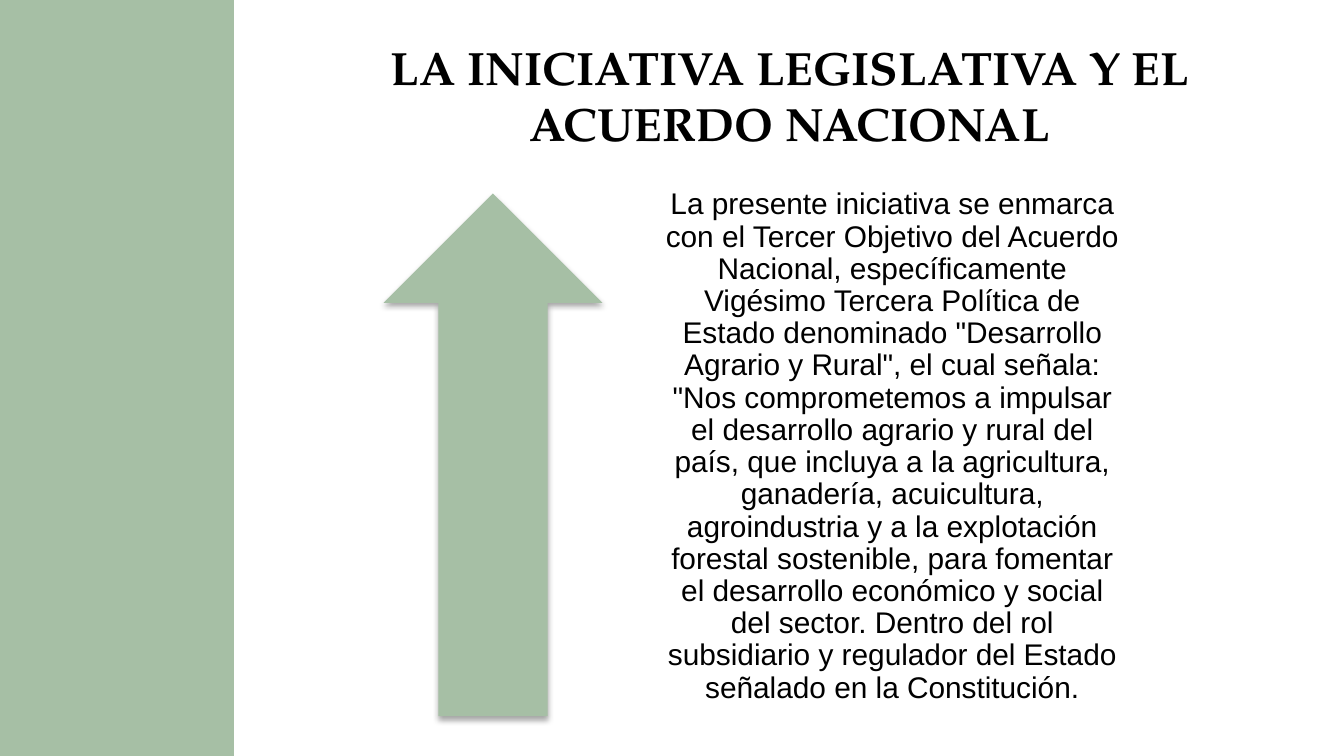
from dataclasses import dataclass

from lxml.etree import SubElement
from pptx import Presentation
from pptx.dml.color import RGBColor
from pptx.enum.shapes import MSO_SHAPE as Shape
from pptx.enum.text import MSO_ANCHOR as Anchor, PP_ALIGN as Align
from pptx.oxml.ns import qn
from pptx.util import Pt


@dataclass(frozen=True)
class Theme:
    green = RGBColor(0xA6, 0xBF, 0xA5)
    black = RGBColor(0, 0, 0)
    title_font = "TeX Gyre Pagella"
    body_font = "Arial"
    title_size = Pt(25)
    body_size = Pt(16)


theme = Theme()

TITLE = "LA INICIATIVA LEGISLATIVA Y EL ACUERDO NACIONAL"
BODY = (
    "La presente iniciativa se enmarca con el Tercer Objetivo del Acuerdo "
    "Nacional, específicamente Vigésimo Tercera Política de Estado denominado "
    '"Desarrollo Agrario y Rural", el cual señala: "Nos comprometemos a '
    "impulsar el desarrollo agrario y rural del país, que incluya a la "
    "agricultura, ganadería, acuicultura, agroindustria y a la explotación "
    "forestal sostenible, para fomentar el desarrollo económico y social del "
    "sector. Dentro del rol subsidiario y regulador del Estado señalado en la "
    "Constitución."
)

prs = Presentation()
prs.slide_width, prs.slide_height = Pt(720), Pt(405)
s = prs.slides.add_slide(prs.slide_layouts[6])

# Side band and arrow
content_top, content_height = 103.7, 280
for kind, left, top, width, height in [
    (Shape.RECTANGLE, 0, 0, 125.3, 405),
    (Shape.UP_ARROW, 205.5, content_top, 117.2, content_height),
]:
    sp = s.shapes.add_shape(kind, Pt(left), Pt(top), Pt(width), Pt(height))
    sp.shadow.inherit = False
    sp.fill.solid()
    sp.fill.fore_color.rgb = theme.green
    sp.line.fill.background()

# The arrow, drawn last, casts a soft shadow straight down
effects = sp._element.spPr.find(qn("a:effectLst"))
shadow = SubElement(effects, qn("a:outerShdw"), blurRad=str(Pt(3.1)),
                    dist=str(Pt(1.8)), dir="5400000", rotWithShape="0")
color = SubElement(shadow, qn("a:srgbClr"), val="000000")
SubElement(color, qn("a:alpha"), val="35000")

# Title and body; insets run left, top, right, bottom
for text, box, insets, anchor, font, size, bold, spacing in [
    (TITLE, (164.2, 47.5, 517.7, 56.2), (7.2, 7.2, 7.2, 23), Anchor.BOTTOM,
     theme.title_font, theme.title_size, True, 1),
    (BODY, (346.3, content_top, 263.5, content_height), (8.6, 0, 8.6, 8.6),
     Anchor.MIDDLE, theme.body_font, theme.body_size, False, 0.9),
]:
    tf = s.shapes.add_textbox(*map(Pt, box)).text_frame
    tf.word_wrap = True
    tf.vertical_anchor = anchor
    (tf.margin_left, tf.margin_top,
     tf.margin_right, tf.margin_bottom) = map(Pt, insets)
    tf.text = text
    p = tf.paragraphs[0]
    p.alignment = Align.CENTER
    p.line_spacing = spacing
    r = p.runs[0]
    r.font.name = font
    r.font.size = size
    r.font.bold = bold
    r.font.color.rgb = theme.black

prs.save("out.pptx")
